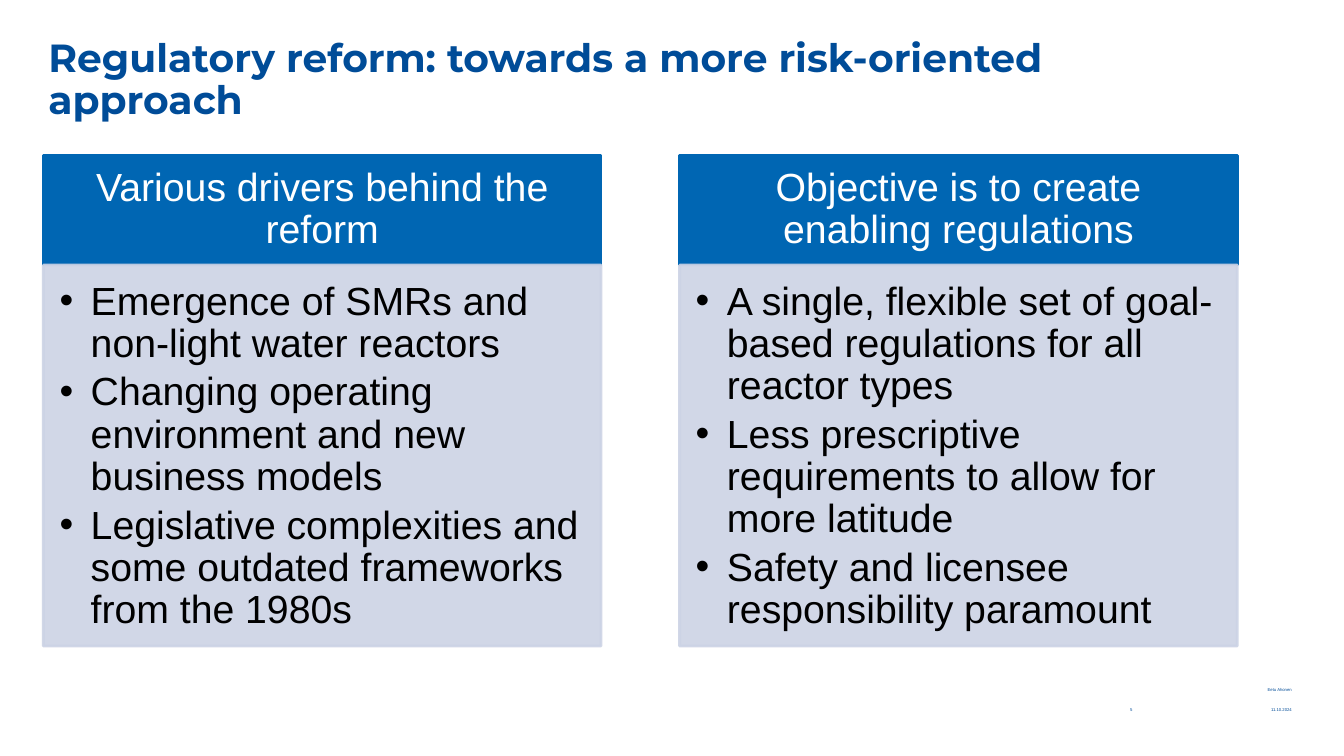
from dataclasses import dataclass

from lxml import etree
from pptx import Presentation
from pptx import util as u
from pptx.dml.color import RGBColor
from pptx.enum import shapes, text
from pptx.oxml.ns import qn

WIDTH, HEIGHT = u.Inches(13.33), u.Inches(7.5)
NAVY, BLUE, PALE, WHITE, BLACK = "004C98", "0066B3", "CCD3E5", "FFFFFF", "000000"
LEFT, TOP, WIDE, PITCH = 3.23, 20.53, 41.49, 47.34
HEAD, BODY = 14.53, 50.4
INDENT = u.Inches(0.31)
MID, BASE = text.MSO_ANCHOR.MIDDLE, text.MSO_ANCHOR.BOTTOM


@dataclass
class Box:
    """A place on the slide, in percent of its width and height."""
    x: float
    y: float
    w: float
    h: float

    def emu(self) -> list[int]:
        return [round(part * side / 100) for part, side in
                zip((self.x, self.y, self.w, self.h), (WIDTH, HEIGHT) * 2)]


@dataclass
class Style:
    size: float
    color: str
    align: text.PP_ALIGN = text.PP_ALIGN.LEFT
    anchor: text.MSO_ANCHOR = MID
    inset: tuple = (0.1, 0.05, 0.1, 0.05)
    after: float = 0
    font: str = "Arial"
    bold: bool = False
    bullet: bool = False


@dataclass
class Panel:
    head: str
    items: list[str]


@dataclass
class Note:
    words: str
    box: Box


TITLE = Style(28, NAVY, anchor=BASE, inset=(0.05, 0, 0.18, 0),
              font="Montserrat", bold=True)
SMALL = Style(3, NAVY, align=text.PP_ALIGN.RIGHT, after=6)
LABEL = Style(28, WHITE, align=text.PP_ALIGN.CENTER, inset=(0.22, 0.12, 0.22, 0.12))
LIST = Style(28, BLACK, anchor=text.MSO_ANCHOR.TOP,
             inset=(0.16, 0.16, 0.22, 0.24), after=4.4, bullet=True)

PANELS = [
    Panel("Various drivers behind the reform", [
        "Emergence of SMRs and non-light water reactors",
        "Changing operating environment and new business models",
        "Legislative complexities and some outdated frameworks from the 1980s"]),
    Panel("Objective is to create enabling regulations", [
        "A single, flexible set of goal-based regulations for all reactor types",
        "Less prescriptive requirements to allow for more latitude",
        "Safety and licensee responsibility paramount"]),
]
NOTES = [
    Note("11.10.2024", Box(88.82, 92.93, 8.03, 2.13)),
    Note("Eetu Ahonen", Box(66.39, 90.27, 30.46, 2.13)),
    Note("5", Box(81.02, 92.93, 3.98, 2.13)),
]


def tint(code: str) -> RGBColor:
    return RGBColor.from_string(code)


def dot(para) -> None:
    """Give a paragraph a hanging round bullet."""
    props = para._p.get_or_add_pPr()
    props.set("marL", str(INDENT))
    props.set("indent", str(-INDENT))
    etree.SubElement(props, qn("a:buFont")).set("typeface", "Arial")
    etree.SubElement(props, qn("a:buChar")).set("char", "•")


def write(shape, lines: list[str], style: Style) -> None:
    frame = shape.text_frame
    frame.word_wrap = True
    frame.vertical_anchor = style.anchor
    (frame.margin_left, frame.margin_top,
     frame.margin_right, frame.margin_bottom) = map(u.Inches, style.inset)
    frame.text = "\n".join(lines)
    for para in frame.paragraphs:
        if style.bullet:
            dot(para)
        para.alignment = style.align
        para.line_spacing = 0.9
        para.space_before = u.Pt(0)
        para.space_after = u.Pt(style.after)
        for run in para.runs:
            run.font.name = style.font
            run.font.size = u.Pt(style.size)
            run.font.bold = style.bold
            run.font.color.rgb = tint(style.color)


def label(slide, box: Box, words: str, style: Style) -> None:
    write(slide.shapes.add_textbox(*box.emu()), [words], style)


def block(slide, box: Box, color: str, lines: list[str], style: Style,
          alpha: int = 100) -> None:
    """Draw a filled rectangle with text; alpha is its opacity in percent."""
    shape = slide.shapes.add_shape(shapes.MSO_SHAPE.RECTANGLE, *box.emu())
    shape.shadow.inherit = False
    shape.fill.solid()
    shape.fill.fore_color.rgb = tint(color)
    shape.line.color.rgb = tint(color)
    shape.line.width = u.Pt(2)
    if alpha < 100:
        for node in shape._element.spPr.iter(qn("a:srgbClr")):
            etree.SubElement(node, qn("a:alpha")).set("val", str(alpha * 1000))
    write(shape, lines, style)


def main() -> None:
    deck = Presentation()
    deck.slide_width, deck.slide_height = WIDTH, HEIGHT
    slide = deck.slides.add_slide(deck.slide_layouts[6])
    label(slide, Box(LEFT, 4.53, 88.75, 11.73),
          "Regulatory reform: towards a more risk-oriented approach", TITLE)
    for note in NOTES:
        label(slide, note.box, note.words, SMALL)
    for col, panel in enumerate(PANELS):
        x = LEFT + col * PITCH
        block(slide, Box(x, TOP, WIDE, HEAD), BLUE, [panel.head], LABEL)
        block(slide, Box(x, TOP + HEAD, WIDE, BODY), PALE, panel.items, LIST, 90)
    deck.save("out.pptx")


if __name__ == "__main__":
    main()
